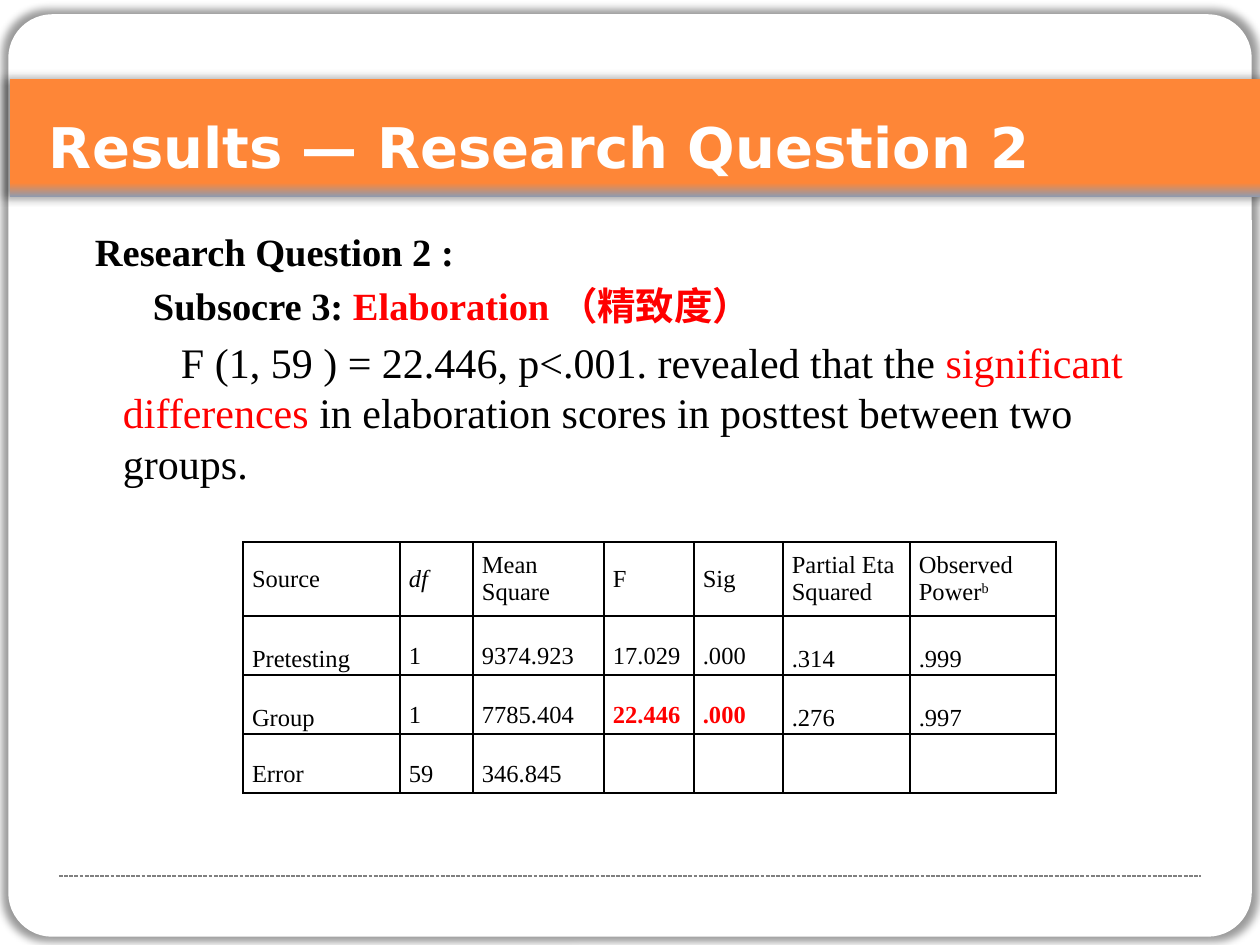
from lxml import etree
from pptx import Presentation, util as u
from pptx.dml.color import RGBColor
from pptx.enum import dml, shapes, text
from pptx.oxml import parse_xml
from pptx.oxml.ns import nsdecls, qn

SCALE = 914400 / 126
ORANGE, RED, BLACK, WHITE = "FE8637", "FF0000", "000000", "FFFFFF"
SERIF = "Times New Roman"


def px(*lengths):
    return [u.Emu(round(length * SCALE)) for length in lengths]


def write(para, spans, **base):
    """Add (words, changes) spans to a paragraph over a base format."""
    for words, changes in spans:
        span = para.add_run()
        span.text = words
        style = {**base, **changes}
        span.font.color.rgb = RGBColor.from_string(style.pop("color", BLACK))
        raised = style.pop("raised", False)
        for name, value in style.items():
            setattr(span.font, name, value)
        if raised:
            span._r.get_or_add_rPr().set("baseline", "30000")


deck = Presentation()
deck.slide_width, deck.slide_height = px(1260, 945)
page = deck.slides.add_slide(deck.slide_layouts[6])

# Rounded card and title band, each with a soft shadow
card = page.shapes.add_shape(shapes.MSO_SHAPE.ROUNDED_RECTANGLE, *px(10, 16, 1240, 919))
card.adjustments[0] = 0.046
card.fill.solid()
card.fill.fore_color.rgb = RGBColor.from_string(WHITE)
card.line.color.rgb = RGBColor.from_string(WHITE)
card.line.width = u.Pt(2)

rule = page.shapes.add_connector(shapes.MSO_CONNECTOR.STRAIGHT, *px(59, 876, 1201, 876))
rule.line.color.rgb = RGBColor.from_string("808080")
rule.line.width = u.Pt(0.75)
rule.line.dash_style = dml.MSO_LINE.SQUARE_DOT
etree.SubElement(rule._element.spPr, qn("a:effectLst"))

band = page.shapes.add_shape(shapes.MSO_SHAPE.RECTANGLE, *px(10, 79, 1250, 118))
band.fill.gradient()
band.fill.gradient_angle = 270
for stop, (position, color) in zip(band.fill.gradient_stops, [(0.88, ORANGE), (1, "8E9BB0")]):
    stop.position = position
    stop.color.rgb = RGBColor.from_string(color)
band.line.fill.background()

for shape in (card, band):
    shape.shadow.inherit = False
    shape._element.spPr.find(qn("a:effectLst")).append(parse_xml(
        f'<a:outerShdw {nsdecls("a")} blurRad="63500" dist="0" dir="0" '
        'sx="101000" sy="101000" algn="ctr" rotWithShape="0">'
        '<a:srgbClr val="000000"><a:alpha val="40000"/></a:srgbClr></a:outerShdw>'))

# Title and body text boxes
title = page.shapes.add_textbox(*px(49, 112, 1120, 68))
body = page.shapes.add_textbox(*px(76, 228, 1066, 270))
for box in (title, body):
    for side in ("left", "top", "right", "bottom"):
        setattr(box.text_frame, f"margin_{side}", 0)
    box.text_frame.word_wrap = True
write(title.text_frame.paragraphs[0], [("Results — Research Question 2", {})],
      name="DejaVu Sans", size=u.Pt(32), bold=True, color=WHITE)

# Each line: left margin, first-line indent, size, bold, space before, spans
lines = [
    (19, 0, 22, True, 0, [("Research Question 2 :", {})]),
    (77, 0, 22, True, 4.4, [("Subsocre 3:", {}), (" Elaboration （精致度）", {"color": RED})]),
    (47, 58, 24, False, 4.8, [
        ("F (1, 59 ) = 22.446, p<.001. revealed that the ", {}),
        ("significant differences ", {"color": RED}),
        ("in elaboration scores in posttest between two groups.", {})]),
]
for i, (margin, indent, size, bold, before, spans) in enumerate(lines):
    para = body.text_frame.paragraphs[0] if i == 0 else body.text_frame.add_paragraph()
    left, first = px(margin, indent)
    para._p.get_or_add_pPr().set("marL", str(left))
    para._p.get_or_add_pPr().set("indent", str(first))
    para.space_before = u.Pt(before)
    write(para, spans, name=SERIF, size=u.Pt(size), bold=bold)

# Results table
rows = [
    ["Source", "df", "Mean Square", "F", "Sig", "Partial Eta Squared", "Observed"],
    ["Pretesting", "1", "9374.923", "17.029", ".000", ".314", ".999"],
    ["Group", "1", "7785.404", "22.446", ".000", ".276", ".997"],
    ["Error", "59", "346.845", "", "", "", ""],
]
widths, heights = [157, 73, 131, 90, 89, 127, 146], [74, 59, 59, 59]
special = {(0, 1): {"italic": True},
           (2, 3): {"bold": True, "color": RED}, (2, 4): {"bold": True, "color": RED}}
table = page.shapes.add_table(
    len(rows), len(widths), *px(243, 542, sum(widths), sum(heights))).table
table.first_row = table.horz_banding = False
for column, width in zip(table.columns, px(*widths)):
    column.width = width
for row, height in zip(table.rows, px(*heights)):
    row.height = height

inset = px(9)[0]
for r, row in enumerate(rows):
    for c, words in enumerate(row):
        cell = table.cell(r, c)
        middle = r == 0 or (r < 3 and c in (0, 5, 6))
        anchor = text.MSO_ANCHOR.MIDDLE if middle else text.MSO_ANCHOR.TOP
        layout = {"margin_left": inset, "margin_right": inset, "margin_top": 0,
                  "margin_bottom": 0, "vertical_anchor": anchor}
        for name, value in layout.items():
            setattr(cell, name, value)
        cell.fill.background()
        for i, side in enumerate("LRTB"):
            cell._tc.get_or_add_tcPr().insert(i, parse_xml(
                f'<a:ln{side} {nsdecls("a")} w="12700"><a:solidFill>'
                f'<a:srgbClr val="{BLACK}"/></a:solidFill></a:ln{side}>'))
        para = cell.text_frame.paragraphs[0]
        if r > 0:
            para.line_spacing = 2.0
        if words:
            write(para, [(words, special.get((r, c), {}))], name=SERIF, size=u.Pt(14))
write(table.cell(0, 6).text_frame.add_paragraph(),
      [("Power", {}), ("b", {"raised": True})], name=SERIF, size=u.Pt(14))

deck.save("out.pptx")
